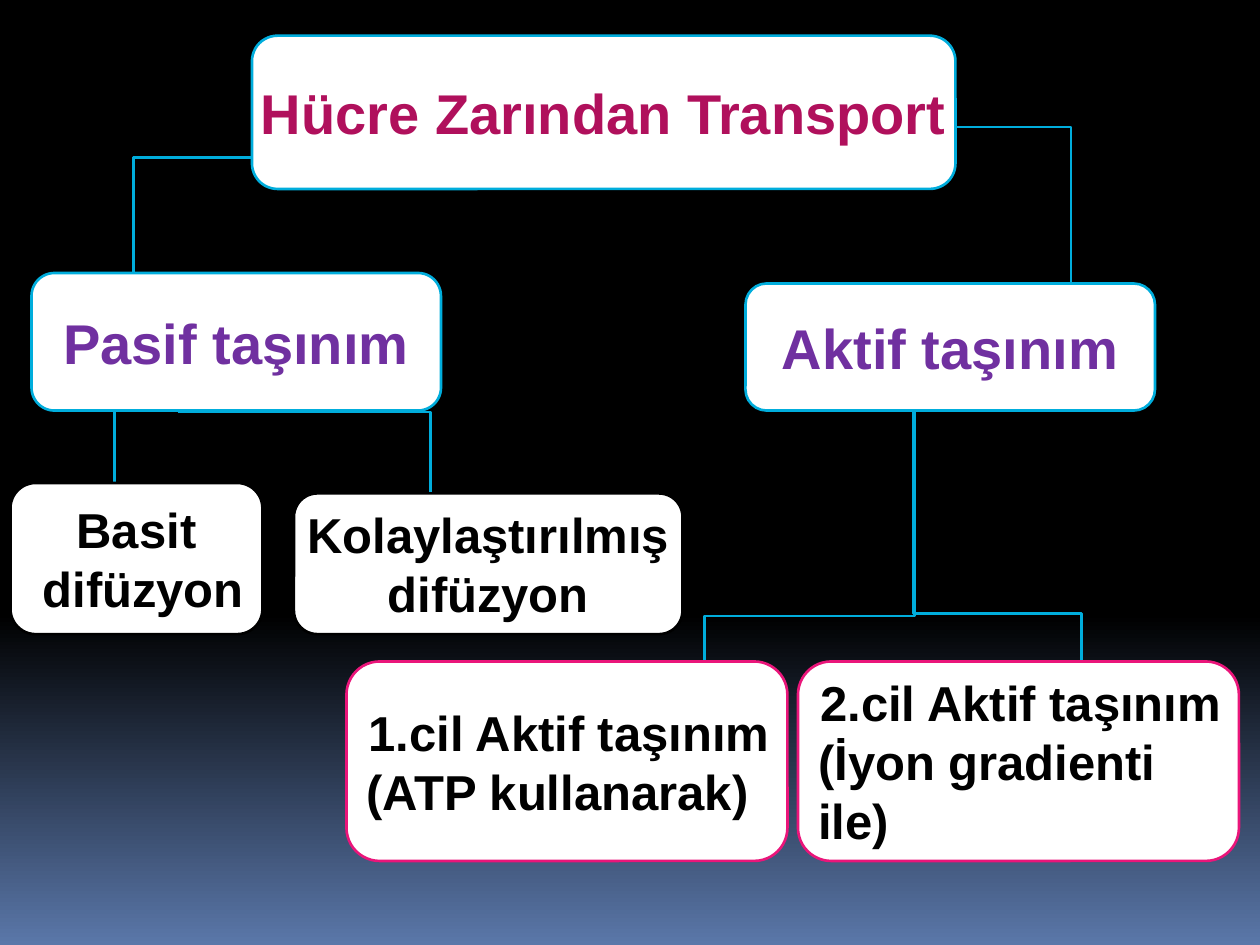
from copy import deepcopy

from lxml import etree
from pptx import Presentation
from pptx.dml.color import RGBColor
from pptx.enum.shapes import MSO_CONNECTOR, MSO_SHAPE
from pptx.enum.text import MSO_ANCHOR, PP_ALIGN
from pptx.oxml.ns import qn
from pptx.util import Inches, Pt

BLACK = RGBColor(0x00, 0x00, 0x00)
WHITE = RGBColor(0xFF, 0xFF, 0xFF)
STEEL = RGBColor(0x5A, 0x77, 0xA9)
CYAN = RGBColor(0x00, 0xAD, 0xDC)
PINK = RGBColor(0xEA, 0x15, 0x7A)
CRIMSON = RGBColor(0xB0, 0x10, 0x5C)
PURPLE = RGBColor(0x70, 0x30, 0xA0)

# Grid of 120 columns by 90 rows, twelve cells to the inch
COLUMNS, ROWS = 120, 90
CELL = Inches(10) / COLUMNS


def grid(cells):
    return round(cells * CELL)


def paint_background(slide):
    """Black down to 65 % of the height, then fading to steel blue."""
    fill = slide.background.fill
    fill.gradient()
    fill.gradient_angle = 270
    first, last = fill.gradient_stops
    first.color.rgb, first.position = BLACK, 0
    last.color.rgb, last.position = STEEL, 1
    stops = slide.background._cSld.find(".//" + qn("a:gsLst"))
    middle = deepcopy(stops[0])
    middle.set("pos", "65000")
    stops.insert(1, middle)


def add_elbow(slide, start, end, drop=0):
    """Run down by the share drop, across, then down to the end."""
    (x1, y1), (x2, y2) = start, end
    across, down = abs(x2 - x1), y2 - y1
    left = (x1 + x2 - down) / 2
    top = (y1 + y2 - across) / 2
    connector = slide.shapes.add_connector(
        MSO_CONNECTOR.ELBOW, grid(left), grid(top),
        grid(left + down), grid(top + across))
    connector.line.color.rgb = CYAN
    connector.line.width = Pt(1.5)

    # Turn the elbow so that it starts and ends vertically
    properties = connector._element.spPr
    frame = properties.find(qn("a:xfrm"))
    if x2 > x1:
        frame.set("rot", "16200000")
        frame.set("flipH", "1")
    else:
        frame.set("rot", "5400000")
    adjustments = properties.find(".//" + qn("a:avLst"))
    etree.SubElement(adjustments, qn("a:gd"), name="adj1",
                     fmla=f"val {round(drop * 100000)}")
    etree.SubElement(properties, qn("a:effectLst"))


def add_node(slide, box, lines, line_color, text_color=BLACK, size=28,
             last_line_left=False):
    left, top, width, height = map(grid, box)
    shape = slide.shapes.add_shape(
        MSO_SHAPE.ROUNDED_RECTANGLE, left, top, width, height)
    shape.shadow.inherit = False
    shape.fill.solid()
    shape.fill.fore_color.rgb = WHITE
    shape.line.color.rgb = line_color
    shape.line.width = Pt(1.5)

    frame = shape.text_frame
    frame.word_wrap = last_line_left
    frame.vertical_anchor = MSO_ANCHOR.MIDDLE
    frame.margin_left = grid(1) if last_line_left else 0
    frame.margin_right = grid(0.6) if last_line_left else 0
    frame.margin_top = frame.margin_bottom = 0
    frame.text = "\n".join(lines)
    for paragraph in frame.paragraphs:
        paragraph.alignment = PP_ALIGN.CENTER
        font = paragraph.font
        font.name, font.size, font.bold = "Arial", Pt(size), True
        font.color.rgb = text_color
    if last_line_left:
        frame.paragraphs[-1].alignment = PP_ALIGN.LEFT


def add_root(slide, box):
    left, top, width, height = box
    # Arms to the two branches
    add_elbow(slide, (left + 33, top + 11.6), (left - 11.3, top + 22.6))
    add_elbow(slide, (left + 45, top + 8.7), (left + 78, top + 23.6))
    add_node(slide, box, ["Hücre Zarından Transport"], CYAN, CRIMSON, 32)


def add_passive_branch(slide, box):
    left, top, width, height = box
    # Arms to the two kinds of diffusion
    add_elbow(slide, (left + 20, top + 13.1), (left + 9.9, top + 20))
    add_elbow(slide, (left + 16, top + 13.25), (left + 40, top + 21))
    add_node(slide, (left + 2, top, 39, 13.1), ["Pasif taşınım"],
             CYAN, PURPLE, 32)
    add_node(slide, (left, top + 20, 24, 14.4), ["Basit", " difüzyon"], BLACK)
    add_node(slide, (left + 27, top + 21, 37, 13.4),
             ["Kolaylaştırılmış", "difüzyon"], BLACK)


def add_active_branch(slide, box):
    left, top, width, height = box
    child_width, child_top = 42, top + 36
    # A shared trunk with an arm to each child
    add_elbow(slide, (left + 54, top + 12), (left + 70, child_top), 0.81)
    add_elbow(slide, (left + 54.1, top + 12), (left + 34.1, child_top), 0.82)
    add_node(slide, (left + 38, top, 39, 12.1), ["Aktif taşınım"],
             CYAN, PURPLE, 32)
    children = [["1.cil Aktif taşınım", "(ATP kullanarak)"],
                ["2.cil Aktif taşınım", "(İyon gradienti ile)"]]
    for index, lines in enumerate(children):
        child_left = left + index * (child_width + 1)
        add_node(slide, (child_left, child_top, child_width, 19), lines, PINK,
                 last_line_left=True)


def main():
    presentation = Presentation()
    presentation.slide_width = grid(COLUMNS)
    presentation.slide_height = grid(ROWS)
    slide = presentation.slides.add_slide(presentation.slide_layouts[6])
    paint_background(slide)
    add_root(slide, (24, 3.4, 67, 14.6))
    add_passive_branch(slide, (1, 26, 64, 34.4))
    add_active_branch(slide, (33, 27, 85, 55))
    presentation.save("out.pptx")


if __name__ == "__main__":
    main()
